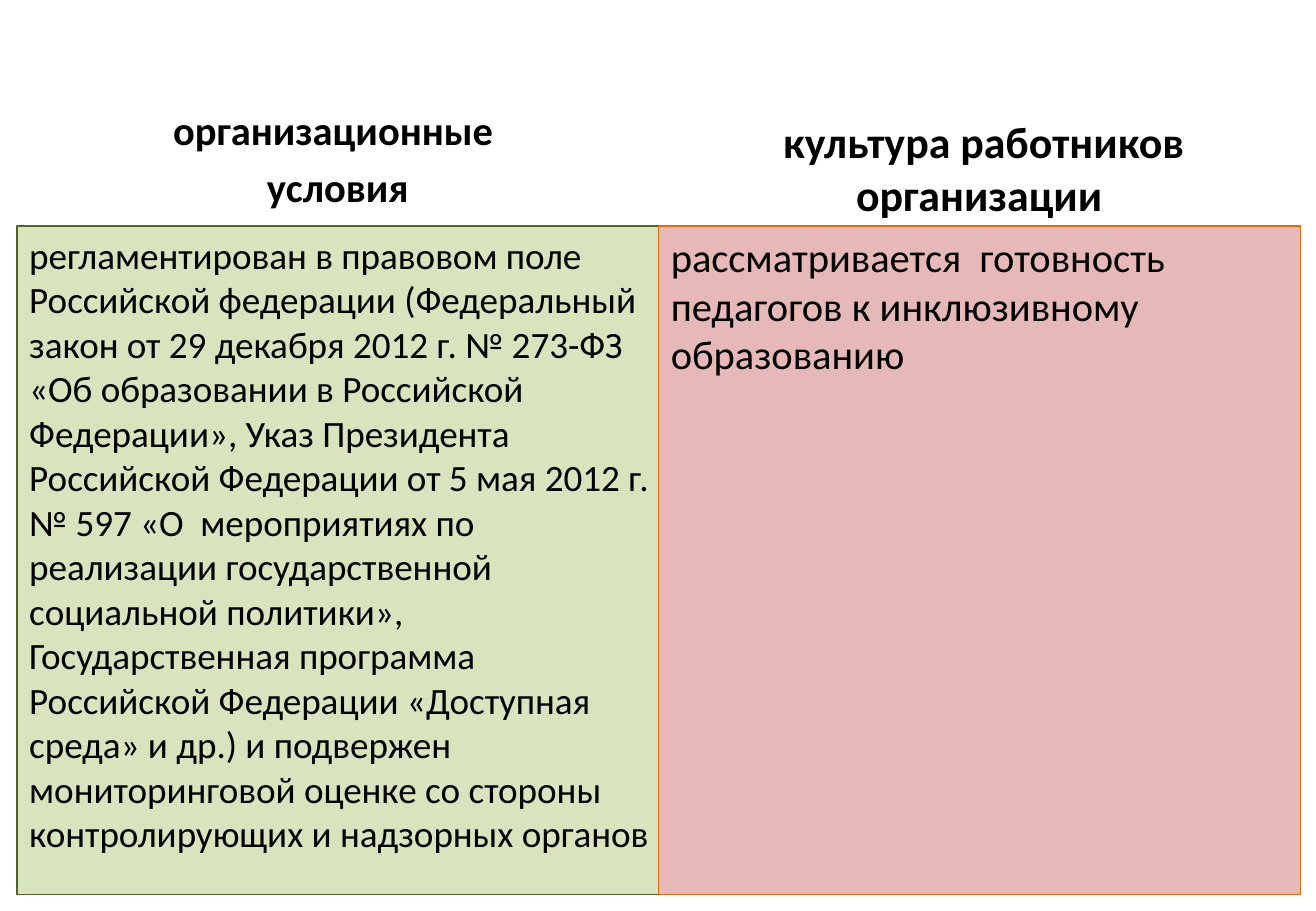
from lxml.etree import SubElement
from pptx import Presentation
from pptx.dml.color import RGBColor
from pptx.enum.text import MSO_ANCHOR, MSO_AUTO_SIZE, PP_ALIGN
from pptx.oxml.ns import qn
from pptx.util import Inches, Pt

BLACK = RGBColor(0x00, 0x00, 0x00)
PALE_GREEN = RGBColor(0xD7, 0xE4, 0xBD)
DARK_GREEN = RGBColor(0x4F, 0x62, 0x28)
PALE_RED = RGBColor(0xE6, 0xB9, 0xB8)
ORANGE = RGBColor(0xE4, 0x6C, 0x0A)

CONDITIONS = (
    "регламентирован в правовом поле Российской федерации (Федеральный закон "
    "от 29 декабря 2012 г. № 273-ФЗ «Об образовании в Российской Федерации», "
    "Указ Президента Российской Федерации от 5 мая 2012 г. № 597 "
    "«О  мероприятиях по реализации государственной социальной политики», "
    "Государственная программа Российской Федерации «Доступная среда» и др.) "
    "и подвержен мониторинговой оценке со стороны контролирующих и надзорных органов"
)
CULTURE = "рассматривается  готовность педагогов к инклюзивному образованию"


class ComparisonSlide:
    font = {"name": "Calibri"}
    left, top = 0.14, 0.99
    column, row = 0.66, 0.87

    def __init__(self, deck):
        self.page = deck.slides.add_slide(deck.slide_layouts.get_by_name("Comparison"))
        title = self.page.shapes.title
        title.element.getparent().remove(title.element)
        self.boxes = {box.placeholder_format.idx: box for box in self.page.placeholders}

    def apply(self, target, values):
        for name, value in values.items():
            setattr(target, name, value)

    def place(self, index, column, row, columns, rows):
        box = self.boxes[index]
        self.apply(box, {
            "left": Inches(self.left + column * self.column),
            "top": Inches(self.top + row * self.row),
            "width": Inches(columns * self.column),
            "height": Inches(rows * self.row),
        })
        return box

    def fill_text(self, box, paragraphs, anchor, align, bold):
        frame = box.text_frame
        self.apply(frame, {"word_wrap": True, "auto_size": MSO_AUTO_SIZE.NONE,
                           "vertical_anchor": anchor})
        for number, spans in enumerate(paragraphs):
            para = frame.add_paragraph() if number else frame.paragraphs[0]
            para.alignment = align
            properties = para._p.get_or_add_pPr()
            properties.set("marL", "0")
            properties.set("indent", "0")
            SubElement(properties, qn("a:buNone"))
            for text, size in spans:
                span = para.add_run()
                span.text = text
                self.apply(span.font, {**self.font, "size": Pt(size), "bold": bold})
                span.font.color.rgb = BLACK

    def heading(self, index, column, rows, paragraphs):
        box = self.place(index, column, 0, 8, rows)
        self.fill_text(box, paragraphs, MSO_ANCHOR.BOTTOM, PP_ALIGN.CENTER, True)

    def panel(self, index, column, columns, text, size, fill, line):
        box = self.place(index, column, 1, columns, 6.33)
        box.fill.solid()
        box.fill.fore_color.rgb = fill
        box.line.color.rgb = line
        box.line.width = Pt(0.75)
        self.fill_text(box, [[(text, size)]], MSO_ANCHOR.TOP, PP_ALIGN.LEFT, False)


def main():
    deck = Presentation()
    deck.slide_width, deck.slide_height = Inches(10.83), Inches(7.5)
    slide = ComparisonSlide(deck)
    slide.heading(1, 0, 0.91, [[("организационные ", 24)], [("условия", 24)]])
    slide.panel(2, 0, 8.11, CONDITIONS, 22, PALE_GREEN, DARK_GREEN)
    slide.heading(3, 8, 1, [[(" ", 24), ("культура работников организации", 26)]])
    slide.panel(4, 8, 8, CULTURE, 24, PALE_RED, ORANGE)
    deck.save("out.pptx")


if __name__ == "__main__":
    main()
